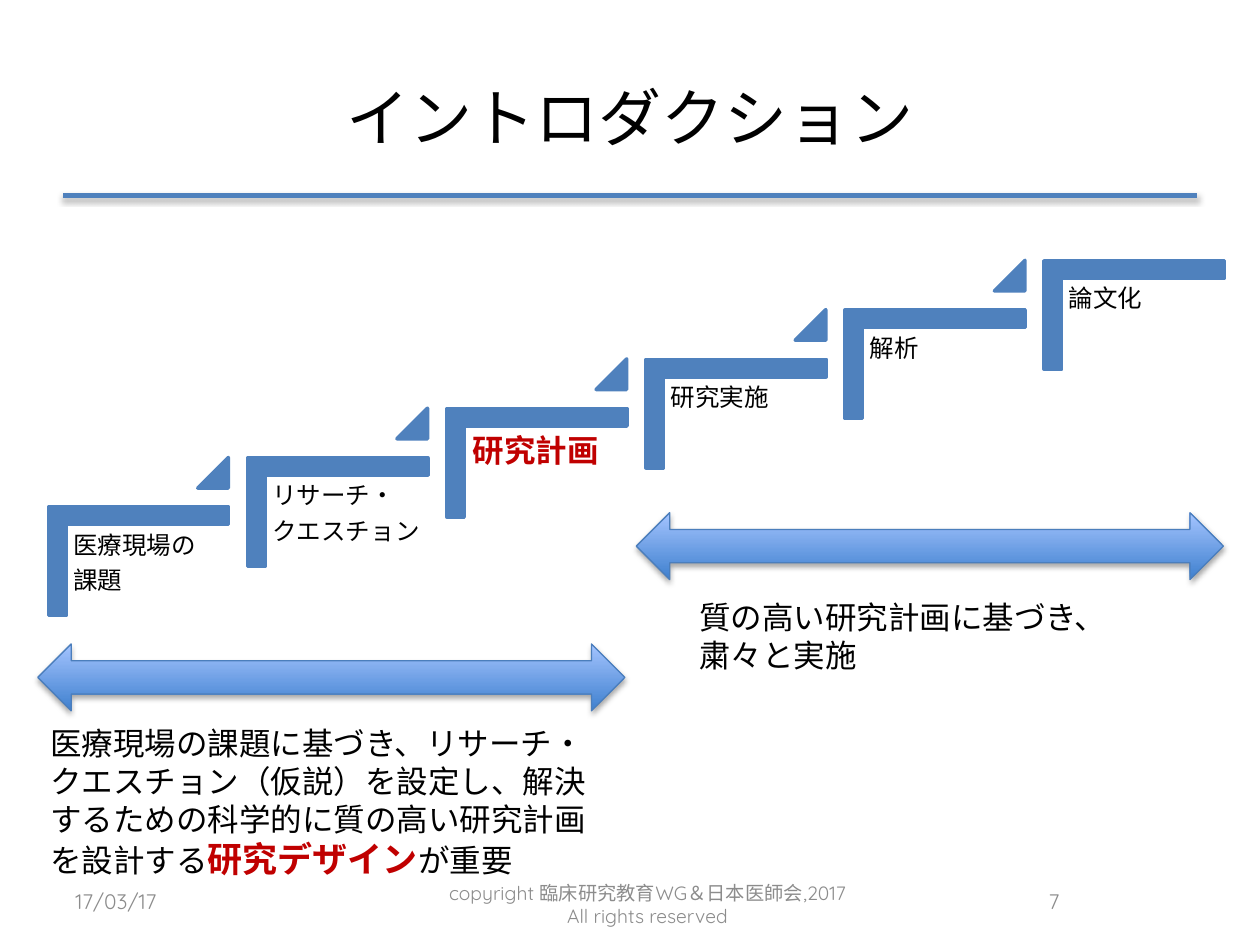
from lxml import etree
from pptx import Presentation
from pptx import util as u
from pptx.dml import color as dml
from pptx.enum import shapes, text
from pptx.oxml import ns

Pt = u.Pt
FONT = "Quicksand"
COLORS = {"blue": "4F81BD", "edge": "4B7EBC", "deep": "3F80CE", "pale": "A4C4FF",
          "black": "000000", "red": "C00000", "gray": "8C8C8C"}
STEPS = [["医療現場の", "課題"], ["リサーチ・", "クエスチョン"], ["研究計画"],
         ["研究実施"], ["解析"], ["論文化"]]
PLAIN = {"size": Pt(18)}
STRONG = {"size": Pt(20), "bold": True}


def rgb(name):
    return dml.RGBColor.from_string(COLORS[name])


def set_all(target, values):
    for name, value in values.items():
        setattr(target, name, value)


def add_effects(shape, shadow=False):
    effects = etree.SubElement(shape._element.spPr, ns.qn("a:effectLst"))
    if shadow:
        outer = etree.SubElement(effects, ns.qn("a:outerShdw"), blurRad=str(Pt(3.1)),
                                 dist=str(Pt(1.8)), dir="5400000", rotWithShape="0")
        tint = etree.SubElement(outer, ns.qn("a:srgbClr"), val=COLORS["black"])
        etree.SubElement(tint, ns.qn("a:alpha"), val="35000")


def add_span(para, words, color, values):
    span = para.add_run()
    span.text = words
    set_all(span.font, {"name": FONT, **values})
    span.font.color.rgb = rgb(color)
    latin = span.font._element.find(ns.qn("a:latin"))
    east = etree.Element(ns.qn("a:ea"), typeface=FONT)
    latin.addnext(east)


def add_text(page, box, paras, frame_values=None, para_values=None):
    frame = page.shapes.add_textbox(*map(Pt, box)).text_frame
    set_all(frame, {"word_wrap": True, **(frame_values or {})})
    for index, spans in enumerate(paras):
        para = frame.add_paragraph() if index else frame.paragraphs[0]
        set_all(para, para_values or {})
        for span in spans:
            add_span(para, *span)


def add_preset(page, kind, box, adjustments=()):
    shape = page.shapes.add_shape(kind, *map(Pt, box))
    for index, value in enumerate(adjustments):
        shape.adjustments[index] = value
    return shape


def add_solid(page, kind, box, adjustments):
    shape = add_preset(page, kind, box, adjustments)
    shape.shadow.inherit = False
    shape.fill.solid()
    shape.fill.fore_color.rgb = rgb("blue")
    shape.line.color.rgb = rgb("blue")
    shape.line.width = Pt(2)
    return shape


def add_header(page, box):
    left, top, width, height = box
    rule = page.shapes.add_connector(shapes.MSO_CONNECTOR.STRAIGHT, Pt(left), Pt(top + height),
                                     Pt(left + width), Pt(top + height))
    rule.line.color.rgb = rgb("blue")
    rule.line.width = Pt(3)
    add_effects(rule, shadow=True)
    add_text(page, box, [[("イントロダクション", "black", {"size": Pt(36)})]],
             {"vertical_anchor": text.MSO_ANCHOR.MIDDLE},
             {"alignment": text.PP_ALIGN.CENTER})


def add_step(page, box, lines, key, last):
    left, top, width, height = box
    shift = (width - height) / 2
    corner = add_solid(page, shapes.MSO_SHAPE.CORNER,
                       (left + shift, top - shift, height, width), (0.161, 0.161))
    corner.rotation = 90
    color, values = ("red", {"size": Pt(18), "bold": True}) if key else ("black", {"size": Pt(14)})
    sides = ("left", "top", "right", "bottom")
    add_text(page, (left + 9.8, top + 10.5, 92.9, 81.4),
             [[(line, color, values)] for line in lines],
             {f"margin_{side}": Pt(5 if key else 4.3) for side in sides},
             {"line_spacing": 0.9, "space_after": Pt(5)})
    if not last:
        add_solid(page, shapes.MSO_SHAPE.ISOSCELES_TRIANGLE,
                  (left + 85.3, top - 28.4, 17.5, 17.5), (1,))


def add_staircase(page, box):
    left, top, width, height = box
    step_width, step_height = 103, 62
    last = len(STEPS) - 1
    across = (width - step_width) / last
    up = (height - step_height) / last
    for index, lines in enumerate(STEPS):
        step_top = top + height - step_height - index * up
        add_step(page, (left + index * across, step_top, step_width, step_height),
                 lines, lines == ["研究計画"], index == last)


def add_phase(page, box, note_box, spans):
    left, top = box[:2]
    arrow = add_preset(page, shapes.MSO_SHAPE.LEFT_RIGHT_ARROW, box)
    arrow.fill.gradient()
    arrow.fill.gradient_angle = 90
    for stop, name, position in zip(arrow.fill.gradient_stops, ("deep", "pale"), (0, 1)):
        stop.color.rgb = rgb(name)
        stop.position = position
    arrow.line.color.rgb = rgb("edge")
    arrow.line.width = Pt(0.75)
    add_effects(arrow, shadow=True)
    dx, dy, width, height = note_box
    add_text(page, (left + dx, top + dy, width, height), [spans],
             {"auto_size": text.MSO_AUTO_SIZE.SHAPE_TO_FIT_TEXT})


def add_footer(page, box):
    left, top, _, height = box
    align = text.PP_ALIGN
    parts = [(0, 168, height, "17/03/17", 12, align.LEFT),
             (210, 248, height + 3.6, "copyright 臨床研究教育WG＆日本医師会,2017 All rights reserved",
              11, align.CENTER),
             (480, 96.5, height, "7", 12, align.RIGHT)]
    for dx, width, part_height, words, size, alignment in parts:
        add_text(page, (left + dx, top, width, part_height),
                 [[(words, "gray", {"size": Pt(size)})]],
                 {"vertical_anchor": text.MSO_ANCHOR.MIDDLE}, {"alignment": alignment})


def main():
    deck = Presentation()
    set_all(deck, {"slide_width": Pt(720), "slide_height": Pt(540)})
    page = deck.slides.add_slide(deck.slide_layouts[6])
    add_header(page, (36, 21.6, 648, 90))
    add_footer(page, (36, 500.4, 576.5, 28.8))
    add_staircase(page, (27.7, 149, 672, 202.8))
    add_phase(page, (21.6, 368, 335.5, 38.2), (0, 42.4, 332, 97.2),
              [("医療現場の課題に基づき、リサーチ・クエスチョン（仮説）を設定し、"
                "解決するための科学的に質の高い研究計画を設計する", "black", PLAIN),
               ("研究デザイン", "red", STRONG), ("が重要", "black", PLAIN)])
    add_phase(page, (363.6, 293, 335.5, 38.2), (28.8, 45.4, 277, 51),
              [("質の高い研究計画に基づき、粛々と実施", "black", PLAIN)])
    deck.save("out.pptx")


if __name__ == "__main__":
    main()
